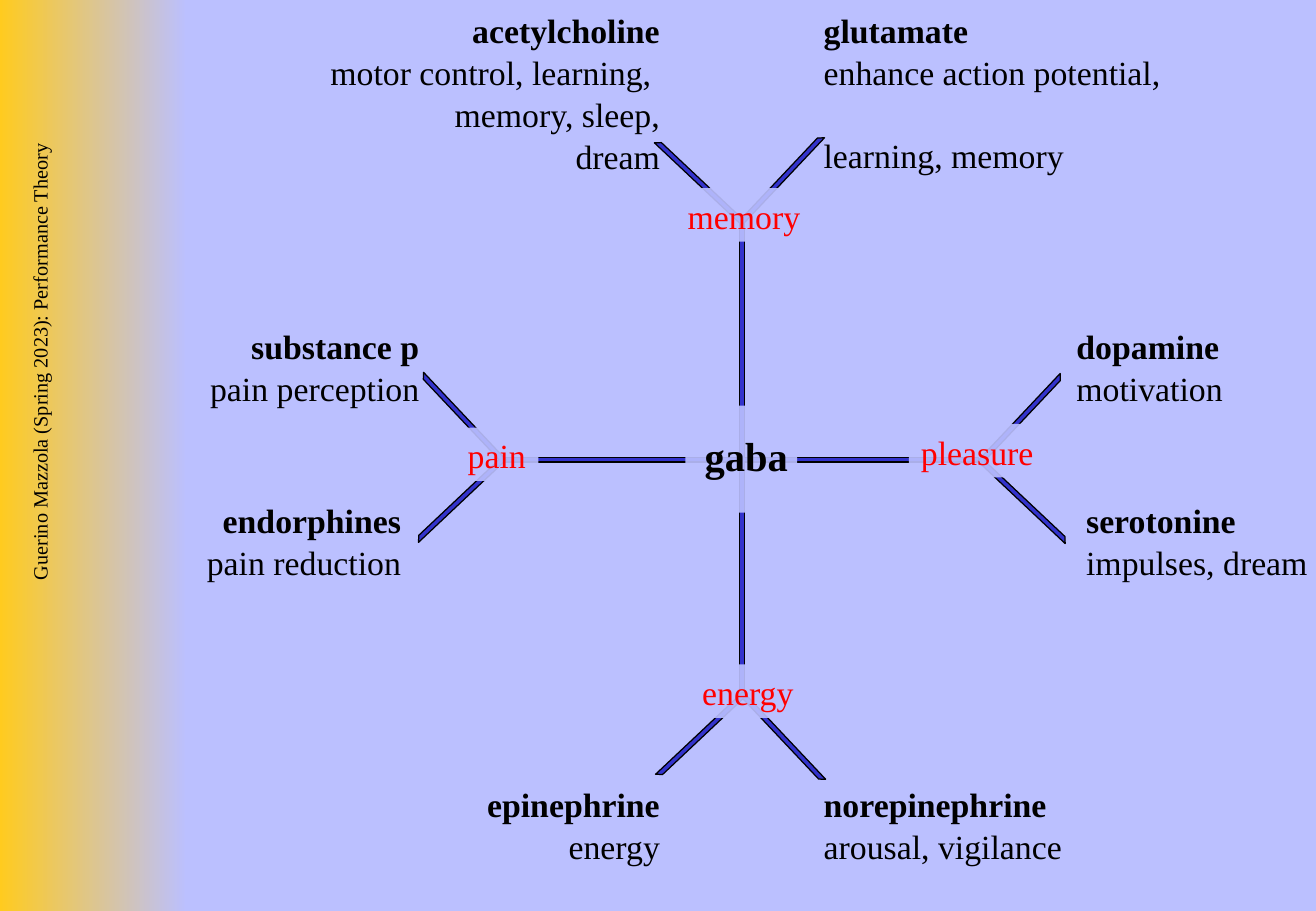
from pptx import Presentation
from pptx.dml.color import RGBColor
from pptx.enum.shapes import MSO_SHAPE
from pptx.enum.text import PP_ALIGN
from pptx.oxml.ns import qn
from pptx.util import Inches, Pt
from lxml.etree import SubElement

FONT = "Times New Roman"
BACKGROUND, GOLD, BLUE, RED, BLACK = "BBC0FF", "FFCB1F", "3333CC", "FF0000", "000000"
LEFT, RIGHT = PP_ALIGN.LEFT, PP_ALIGN.RIGHT

SIDEBAR = "Guerino Mazzola (Spring 2023): Performance Theory"

# Forks at the arm ends: left, top, rotation
FORK_SIZE = 0.99
FORKS = [(2.97, 3.27, 136.7), (8.25, 3.28, 313.3),
         (5.59, 0.66, 223.3), (5.6, 5.9, 46.7)]

# Functions: text, left, top, width
FUNCTIONS = [("pain", 3.75, 3.52, 0.68), ("energy", 5.68, 5.47, 1.01),
             ("memory", 5.56, 1.55, 1.19), ("pleasure", 7.48, 3.49, 1.19)]

# Transmitters: name, effects, left, top, width, alignment
TRANSMITTERS = [
    ("substance p", ["pain perception"], 1.61, 2.62, 1.94, RIGHT),
    ("endorphines", ["pain reduction"], 1.59, 4.05, 1.81, RIGHT),
    ("dopamine", ["motivation"], 8.76, 2.62, 1.42, LEFT),
    ("serotonine", ["impulses, dream"], 8.84, 4.05, 2.04, LEFT),
    ("glutamate", ["enhance action potential,", "learning, memory"], 6.68, 0.02, 3, LEFT),
    ("acetylcholine", ["motor control, learning, ", "memory, sleep,", "dream"],
     2.33, 0.02, 3.2, RIGHT),
    ("epinephrine", ["energy"], 3.63, 6.39, 1.9, RIGHT),
    ("norepinephrine", ["arousal, vigilance"], 6.68, 6.39, 2.25, LEFT),
]


def rgb(value):
    return RGBColor.from_string(value)


def add_block(s, kind, left, top, width, height):
    block = s.shapes.add_shape(kind, Inches(left), Inches(top), Inches(width), Inches(height))
    block.shadow.inherit = False
    block.line.fill.background()
    return block


def add_bar(s, kind, left, top, size, adjustments, rotation=0):
    bar = add_block(s, kind, left, top, size, size)
    for i, value in enumerate(adjustments):
        bar.adjustments[i] = value
    bar.rotation = rotation
    bar.fill.solid()
    bar.fill.fore_color.rgb = rgb(BLUE)
    bar.line.color.rgb = rgb(BLACK)
    bar.line.width = Pt(0.75)


def veil(shape):
    """Cover the lines behind a label with the nearly opaque background colour."""
    shape.fill.solid()
    shape.fill.fore_color.rgb = rgb(BACKGROUND)
    color = shape.fill._xPr.find(qn("a:solidFill"))[0]
    SubElement(color, qn("a:alpha")).set("val", "91000")


def add_text(s, lines, left, top, width, height, size=20, color=BLACK,
             align=LEFT, bold_first=False, spacing=1.04):
    box = s.shapes.add_textbox(Inches(left), Inches(top), Inches(width), Inches(height))
    tf = box.text_frame
    tf.word_wrap = True
    tf.text = "\n".join(lines)
    for i, p in enumerate(tf.paragraphs):
        p.alignment = align
        p.line_spacing = spacing
        for r in p.runs:
            r.font.name = FONT
            r.font.size = Pt(size)
            r.font.bold = bold_first and i == 0
            r.font.color.rgb = rgb(color)
    return box


prs = Presentation()
prs.slide_width, prs.slide_height = Inches(10.83), Inches(7.5)
s = prs.slides.add_slide(prs.slide_layouts[6])
s.background.fill.solid()
s.background.fill.fore_color.rgb = rgb(BACKGROUND)

# Side band with the course title
band = add_block(s, MSO_SHAPE.RECTANGLE, 0, 0, 1.54, 7.5)
band.fill.gradient()
band.fill.gradient_angle = 0
for stop, color, position in zip(band.fill.gradient_stops, (GOLD, BACKGROUND), (0, 1)):
    stop.color.rgb = rgb(color)
    stop.position = position
add_text(s, [SIDEBAR], -2.4, 3.66, 5.65, 0.5, size=12, align=RIGHT, spacing=1).rotation = 270

# Cross and forks
add_bar(s, MSO_SHAPE.CROSS, 4.16, 1.84, 3.89, [0.495])
for left, top, rotation in FORKS:
    add_bar(s, MSO_SHAPE.HALF_FRAME, left, top, FORK_SIZE, [0.041, 0.041], rotation)

# Centre and functions
veil(add_block(s, MSO_SHAPE.RECTANGLE, 5.64, 3.34, 0.92, 0.88))
for name, left, top, width in FUNCTIONS:
    veil(add_text(s, [name], left, top, width, 0.44, color=RED))
add_text(s, ["gaba"], 5.7, 3.48, 0.89, 0.5, size=24, bold_first=True)

# Transmitters with their effects
for name, effects, left, top, width, align in TRANSMITTERS:
    height = 0.1 + 0.335 * (1 + len(effects))
    box = add_text(s, [name, *effects], left, top, width, height,
                   align=align, bold_first=True)
    if name == "glutamate":
        box.text_frame.paragraphs[-1].space_before = Pt(24)

prs.save("out.pptx")
